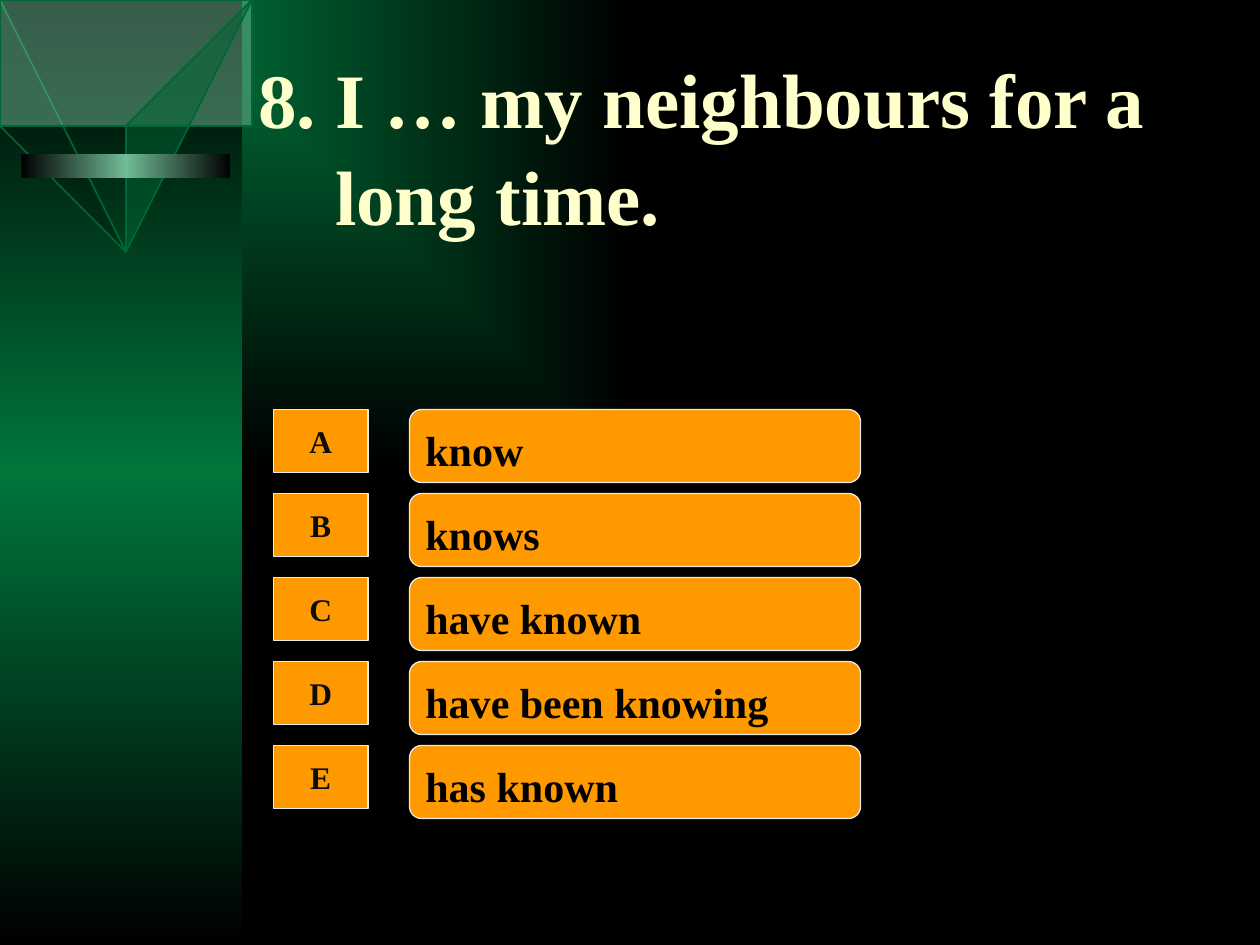
"""Build a quiz slide with one question and five lettered answers."""
from lxml.etree import SubElement
from pptx import Presentation
from pptx.dml.color import RGBColor
from pptx.enum.shapes import MSO_SHAPE as Kind
from pptx.enum.text import MSO_ANCHOR as Anchor, PP_ALIGN as Align
from pptx.oxml.ns import qn
from pptx.util import Inches, Pt

TITLE = "8. I … my neighbours for a\vlong time."
ANSWERS = [("A", "know"), ("B", "knows"), ("C", "have known"),
           ("D", "have been knowing"), ("E", "has known")]
GREEN, BLACK, MINT, EDGE = "00763B", "000000", "71BB96", "006633"
WING = [(1.83, 1.2), (1.83, 1.41), (1.28, 1.03), (1.28, 1.05), (1.36, 0.86)]
SIDE = [(0.98, 1.75), (0.98, 1.52), (0.48, 0.54), (0.26, 0.41)]
TOP = [(0.26, 0.41), (0.48, 0.54), (1.5, 0.54), (1.69, 0.41)]
ROW_TOP, ROW_STEP = 3.25, 2 / 3


def paint(color, code):
    color.rgb = RGBColor.from_string(code)


def blend(fill, root, codes, angle=None):
    fill.gradient()
    grad = root.find(".//" + qn("a:gradFill"))
    for part in list(grad):
        grad.remove(part)
    stops = SubElement(grad, qn("a:gsLst"))
    for i, code in enumerate(codes):
        pos = str(100000 * i // (len(codes) - 1))
        stop = SubElement(stops, qn("a:gs"), pos=pos)
        SubElement(stop, qn("a:srgbClr"), val=code)
    if angle is None:
        focus = SubElement(grad, qn("a:path"), path="rect")
        SubElement(focus, qn("a:fillToRect"), l="0", t="0", r="100000", b="100000")
    else:
        SubElement(grad, qn("a:lin"), ang=str(angle * 60000), scaled="0")


def solid(shape, code, edge, width):
    shape.shadow.inherit = False
    shape.fill.solid()
    paint(shape.fill.fore_color, code)
    paint(shape.line.color, edge)
    shape.line.width = Pt(width)


def band(shape, codes, angle):
    shape.shadow.inherit = False
    blend(shape.fill, shape._element, codes, angle)
    shape.line.fill.background()


def style(para, size, code):
    for name, value in {"name": "Times New Roman", "size": Pt(size), "bold": True}.items():
        setattr(para.font, name, value)
    paint(para.font.color, code)


def box(shapes, kind, *place):
    return shapes.add_shape(kind, *map(Inches, place))


def outline(shapes, points):
    pen = shapes.build_freeform(*points[0], scale=Inches(1))
    pen.add_line_segments(points[1:], close=True)
    return pen.convert_to_shape()


def mirror(points, total):
    return [(total - x, y) for x, y in points]


def emblem(shapes):
    band(outline(shapes, WING), [BLACK, GREEN], 0)
    band(outline(shapes, mirror(WING, 2)), [GREEN, BLACK], 0)
    for points, code in [(SIDE, "002010"), (TOP, MINT), (mirror(SIDE, 1.95), EDGE)]:
        face = outline(shapes, points)
        solid(face, code, EDGE, 1)
        tint = face._element.spPr.find(qn("a:solidFill"))[0]
        SubElement(tint, qn("a:alpha"), val="50000")
    band(box(shapes, Kind.RECTANGLE, 0.17, 1.22, 1.66, 0.19), [BLACK, MINT, BLACK], 0)


def label(shape, text, size, code, align, top):
    solid(shape, "FF9900", "EAEAEA", 0.75)
    frame = shape.text_frame
    frame.word_wrap = True
    frame.vertical_anchor = Anchor.MIDDLE
    frame.margin_top = Inches(top)
    para = frame.paragraphs[0]
    para.text, para.alignment = text, align
    style(para, size, code)


def head(title):
    title.left, title.top, title.width, title.height = map(Inches, (1.95, 0.35, 7.75, 1.58))
    frame = title.text_frame
    frame.text = TITLE
    frame.word_wrap = True
    frame.vertical_anchor = Anchor.MIDDLE
    para = frame.paragraphs[0]
    para.alignment, para.line_spacing = Align.LEFT, 1.05
    props = para._p.get_or_add_pPr()
    props.set("marL", str(Inches(0.61)))
    props.set("indent", str(-Inches(0.61)))
    style(para, 44, "FFFFCC")


def main():
    deck = Presentation()
    deck.slide_width, deck.slide_height = Inches(10), Inches(7.5)
    slide = deck.slides.add_slide(deck.slide_layouts[5])
    shapes = slide.shapes
    blend(slide.background.fill, slide._element, [GREEN, BLACK])
    band(box(shapes, Kind.RECTANGLE, 0, 0, 1.92, 7.5), [BLACK, GREEN, BLACK], 90)
    emblem(shapes)
    head(shapes.title)
    for i, (mark, text) in enumerate(ANSWERS):
        y = ROW_TOP + i * ROW_STEP
        key = box(shapes, Kind.ACTION_BUTTON_CUSTOM, 2.17, y, 0.75, 0.5)
        label(key, mark, 18, "0D0D0D", Align.CENTER, 0.05)
        bar = box(shapes, Kind.ROUNDED_RECTANGLE, 3.25, y, 3.58, 0.58)
        label(bar, text, 24, BLACK, Align.LEFT, 0.1)
    deck.save("out.pptx")


if __name__ == "__main__":
    main()
